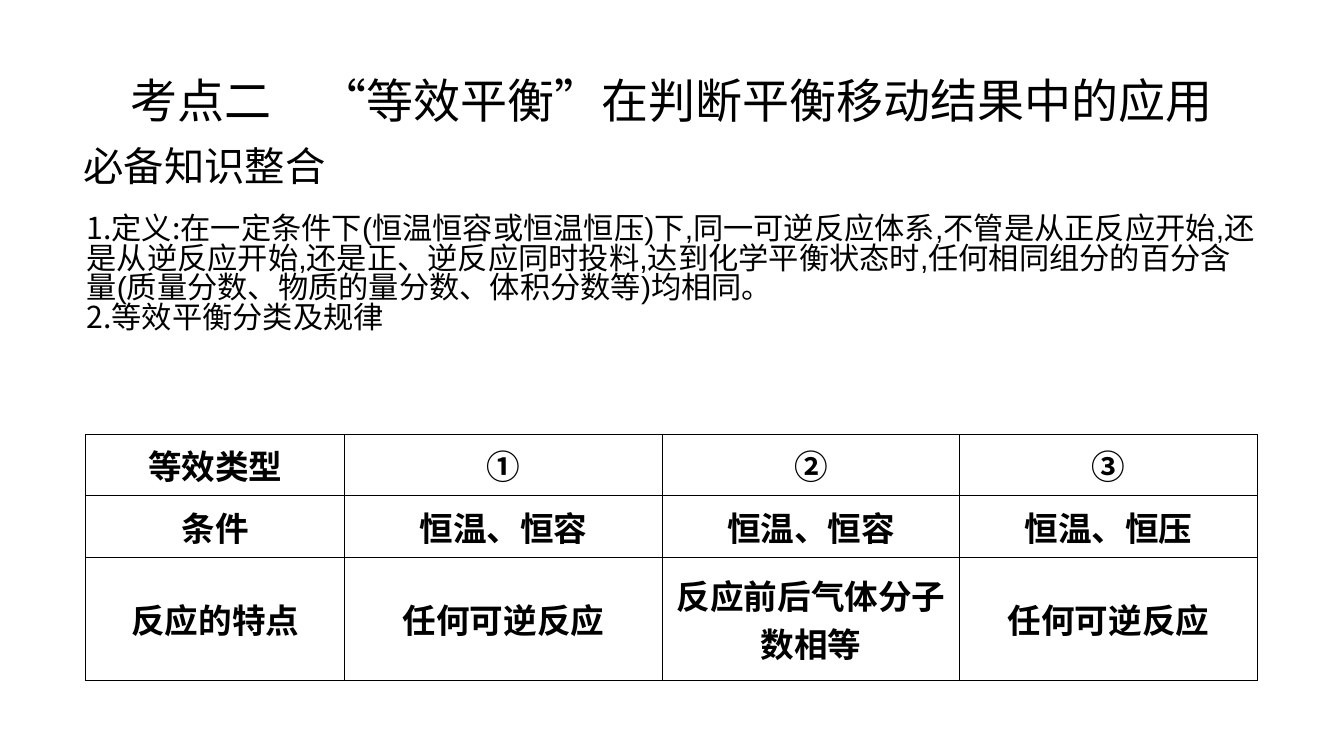
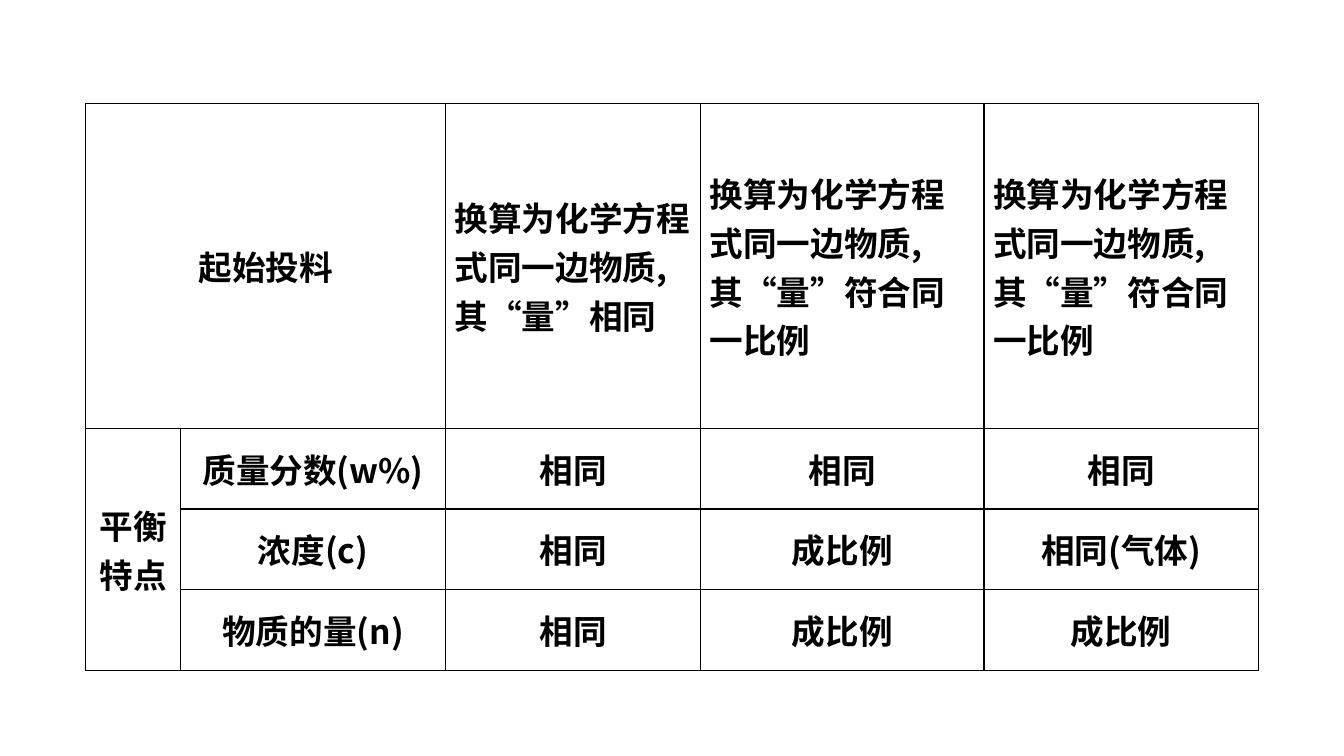
from lxml import etree
from pptx import Presentation
from pptx import util as u
from pptx.dml.color import RGBColor
from pptx.enum import text
from pptx.oxml.ns import qn

BLACK = RGBColor(0, 0, 0)
WHITE = RGBColor(255, 255, 255)
CJK_FONT = "Noto Sans CJK SC"
LATIN_FONT = "Arial"
SLIDE_WIDTH, SLIDE_HEIGHT = 13.33, 7.5
CONTENT_LEFT, CONTENT_WIDTH = 0.85, 11.63
TITLE_ONLY, BLANK = 5, 6
TEXT_SPACING = 0.82
CELL_MARGIN = 0.09
BORDER_WIDTH = 1
CENTER, LEFT = text.PP_ALIGN.CENTER, text.PP_ALIGN.LEFT


def write_text(frame, paragraphs, size, align=LEFT, bold=False, spacing=None):
    """Fill a frame; each paragraph is a list of (wording, Latin font) runs."""
    frame.word_wrap = True
    for index, runs in enumerate(paragraphs):
        paragraph = frame.add_paragraph() if index else frame.paragraphs[0]
        paragraph.alignment = align
        if spacing:
            paragraph.line_spacing = spacing
        for wording, font_name in runs:
            run = paragraph.add_run()
            run.text = wording
            run.font.size = u.Pt(size)
            run.font.bold = bold
            run.font.color.rgb = BLACK
            run.font.name = font_name
            east_asian = etree.SubElement(run.font._element, qn("a:ea"))
            east_asian.set("typeface", CJK_FONT)


def place_text(shape, box, paragraphs, size, align=LEFT):
    shape.left, shape.top, shape.width, shape.height = map(u.Inches, box)
    frame = shape.text_frame
    frame.auto_size = text.MSO_AUTO_SIZE.SHAPE_TO_FIT_TEXT
    frame.vertical_anchor = text.MSO_ANCHOR.TOP
    write_text(frame, paragraphs, size, align, spacing=TEXT_SPACING)


def add_text(slide, box, paragraphs, size):
    shape = slide.shapes.add_textbox(*map(u.Inches, box))
    place_text(shape, box, paragraphs, size)


def draw_borders(cell):
    properties = cell._tc.get_or_add_tcPr()
    for index, side in enumerate(("lnL", "lnR", "lnT", "lnB")):
        line = etree.Element(qn("a:" + side), w=str(u.Pt(BORDER_WIDTH)))
        fill = etree.SubElement(line, qn("a:solidFill"))
        etree.SubElement(fill, qn("a:srgbClr"), val=str(BLACK))
        properties.insert(index, line)


def add_grid(slide, top, columns, rows, wording, merges=(), left_aligned=()):
    """Add a ruled table; merges holds pairs of corner cells."""
    table = slide.shapes.add_table(
        len(rows), len(columns), u.Inches(CONTENT_LEFT), u.Inches(top),
        u.Inches(CONTENT_WIDTH), u.Inches(sum(rows))).table
    table.first_row = table.horz_banding = False
    for column, width in zip(table.columns, columns):
        column.width = u.Inches(width)
    for row, height in zip(table.rows, rows):
        row.height = u.Inches(height)
    for first, last in merges:
        table.cell(*first).merge(table.cell(*last))
    for i, line in enumerate(wording):
        for j, words in enumerate(line):
            cell = table.cell(i, j)
            cell.fill.background()
            draw_borders(cell)
            cell.vertical_anchor = text.MSO_ANCHOR.MIDDLE
            cell.margin_left = cell.margin_right = u.Inches(CELL_MARGIN)
            cell.margin_top = cell.margin_bottom = 0
            if words:
                align = LEFT if (i, j) in left_aligned else CENTER
                write_text(cell.text_frame, [[(words, CJK_FONT)]], 24,
                           align, bold=True)


def add_slide(presentation, layout):
    slide = presentation.slides.add_slide(presentation.slide_layouts[layout])
    slide.background.fill.solid()
    slide.background.fill.fore_color.rgb = WHITE
    return slide


def build_definition_slide(presentation):
    slide = add_slide(presentation, TITLE_ONLY)
    place_text(slide.shapes.title, (CONTENT_LEFT, 0.76, CONTENT_WIDTH, 0.66),
               [[("考点二　“等效平衡”在判断平衡移动结果中的应用", CJK_FONT)]],
               33.6, CENTER)
    add_text(slide, (0.73, 1.44, 11.84, 0.58),
             [[("必备知识整合", CJK_FONT)]], 28.8)
    definition = (
        "在一定条件下(恒温恒容或恒温恒压)下,同一可逆反应体系,不管是从正反应开始,"
        "还是从逆反应开始,还是正、逆反应同时投料,达到化学平衡状态时,"
        "任何相同组分的百分含量(质量分数、物质的量分数、体积分数等)均相同。")
    add_text(slide, (0.76, 2.09, 11.82, 1.55),
             [[("1.定义:", CJK_FONT), (definition, LATIN_FONT)],
              [("2.等效平衡分类及规律", CJK_FONT)]], 21.6)
    add_grid(slide, 4.31, (2.57, 3.15, 2.95, 2.95), (0.61, 0.61, 1.22), [
        ("等效类型", "①", "②", "③"),
        ("条件", "恒温、恒容", "恒温、恒容", "恒温、恒压"),
        ("反应的特点", "任何可逆反应", "反应前后气体分子数相等", "任何可逆反应"),
    ])


def build_comparison_slide(presentation):
    slide = add_slide(presentation, BLANK)
    conversion = "换算为化学方程式同一边物质,其“量”"
    in_proportion = conversion + "符合同一比例"
    add_grid(
        slide, 1.03, (0.94, 2.63, 2.53, 2.81, 2.72), (3.22, 0.8, 0.8, 0.8), [
            ("起始投料", "", conversion + "相同", in_proportion, in_proportion),
            ("平衡特点", "质量分数(w%)", "相同", "相同", "相同"),
            ("", "浓度(c)", "相同", "成比例", "相同(气体)"),
            ("", "物质的量(n)", "相同", "成比例", "成比例"),
        ],
        merges=[((0, 0), (0, 1)), ((1, 0), (3, 0))],
        left_aligned=[(0, 2), (0, 3), (0, 4)])


def main():
    presentation = Presentation()
    presentation.slide_width = u.Inches(SLIDE_WIDTH)
    presentation.slide_height = u.Inches(SLIDE_HEIGHT)
    build_definition_slide(presentation)
    build_comparison_slide(presentation)
    presentation.save("out.pptx")


if __name__ == "__main__":
    main()
